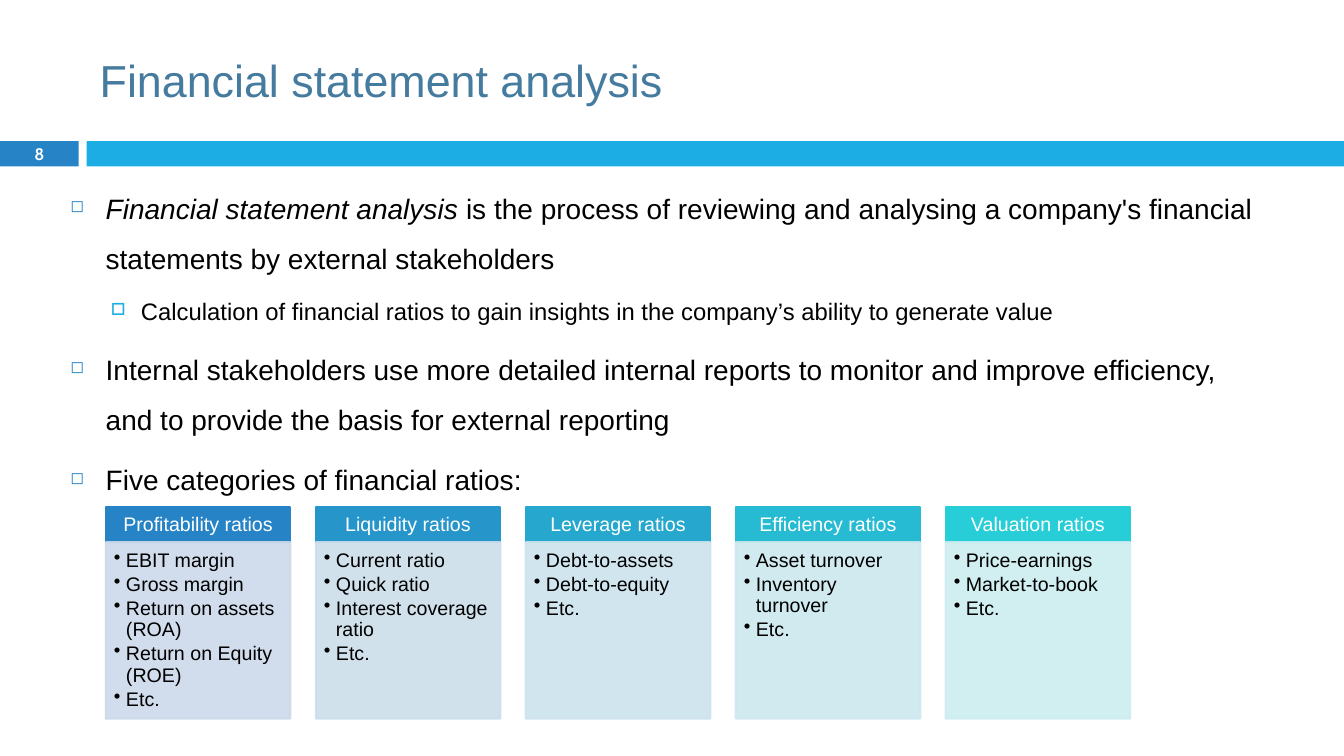
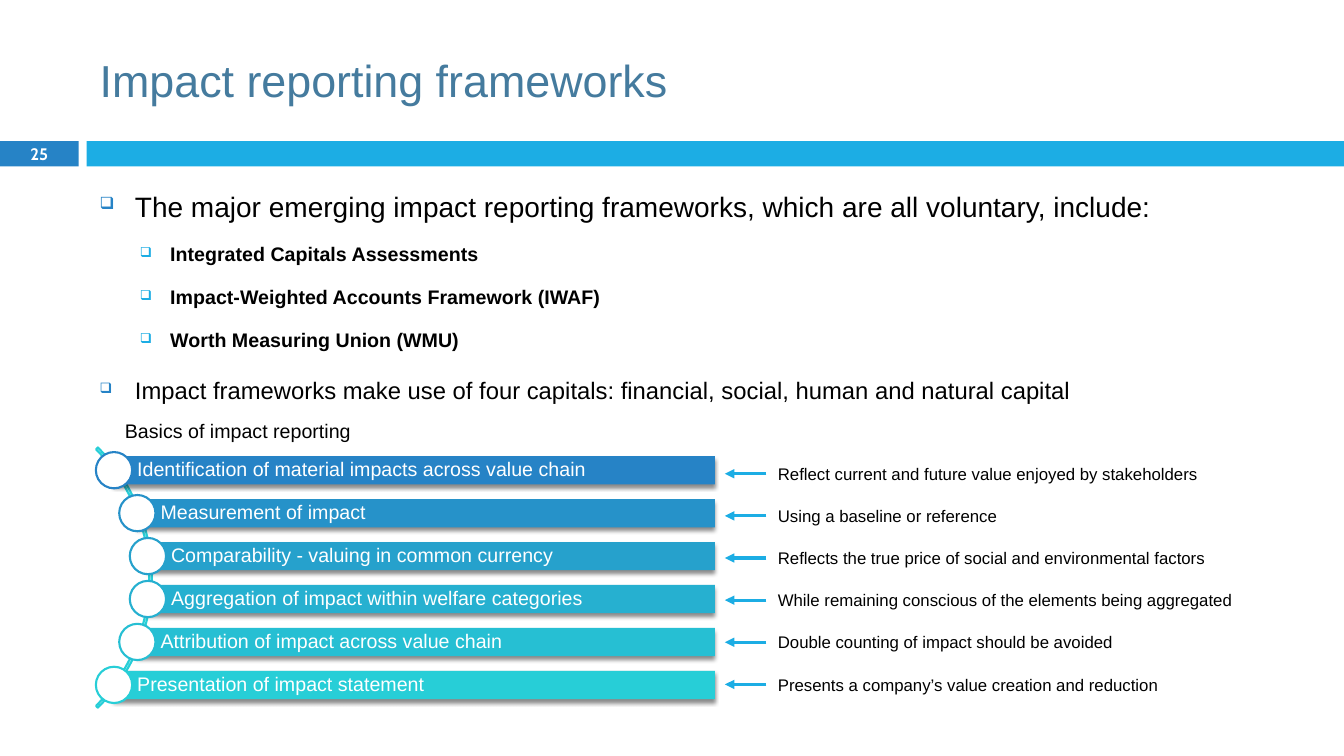
from dataclasses import dataclass
from math import sqrt
from typing import NamedTuple

from lxml import etree
from pptx import Presentation
from pptx.dml.color import RGBColor
from pptx.enum.shapes import MSO_CONNECTOR, MSO_SHAPE
from pptx.enum.text import MSO_ANCHOR, PP_ALIGN
from pptx.oxml.ns import qn
from pptx.util import Inches, Pt

RECT, ROUND = MSO_SHAPE.RECTANGLE, MSO_SHAPE.ROUNDED_RECTANGLE
OVAL, ARC = MSO_SHAPE.OVAL, MSO_SHAPE.BLOCK_ARC
TOP, MID = MSO_ANCHOR.TOP, MSO_ANCHOR.MIDDLE
LEFT, MIDDLE = PP_ALIGN.LEFT, PP_ALIGN.CENTER
STRAIGHT = MSO_CONNECTOR.STRAIGHT

WIDE, HIGH = 13.33, 7.5
HUE = {
    "title": "457B9E", "blue": "2683C6", "sky": "1CADE4", "aqua": "27CED7",
    "mist": "CDD9EA", "foam": "CDEDF0", "black": "000000", "white": "FFFFFF",
}
PAD = (0.1, 0.05, 0.1, 0.05)


class Box(NamedTuple):
    x: float
    y: float
    w: float
    h: float


class Mark(NamedTuple):
    sign: str
    left: float
    hang: float
    hue: str = ""
    size: int = 100


@dataclass(frozen=True)
class Style:
    size: float
    hue: str = HUE["black"]
    face: str = "Arial"
    bold: bool = False
    align: PP_ALIGN = LEFT
    lines: float = 1.0
    before: float = 0
    after: float = 0


@dataclass(frozen=True)
class Para:
    text: str
    style: Style
    mark: Mark | None = None
    lead: str = ""


class Card(NamedTuple):
    head: str
    items: list[str]


class Step(NamedTuple):
    name: str
    note: str


TITLE = Style(32, HUE["title"])
PAGE = Style(11.9, HUE["white"], "Cabin", True, MIDDLE)
MAIN = Style(20, lines=1.5, before=7)
MINOR = Style(17, lines=1.5, before=7)
SUB = Style(17, lines=1.5, before=5.5)
NAME = Style(14, bold=True, lines=1.5, before=5.5)
HEAD = Style(14, HUE["white"], align=MIDDLE, lines=0.9, after=4.9)
BAR = Style(14, HUE["white"], lines=0.9, after=4.9)
ITEM = Style(14, lines=0.9, after=2.1)
LABEL, NOTE = Style(14), Style(12)

DOT = Mark("•", 0.12, 0.12)


def outer(sign: str) -> Mark:
    return Mark(sign, 0.35, 0.35, HUE["blue"], 60)


def inner(sign: str) -> Mark:
    return Mark(sign, 0.7, 0.3, HUE["sky"], 70)


CARDS = [
    Card("Profitability ratios", ["EBIT margin", "Gross margin", "Return on assets (ROA)",
                                  "Return on Equity (ROE)", "Etc."]),
    Card("Liquidity ratios", ["Current ratio", "Quick ratio", "Interest coverage ratio", "Etc."]),
    Card("Leverage ratios", ["Debt-to-assets", "Debt-to-equity", "Etc."]),
    Card("Efficiency ratios", ["Asset turnover", "Inventory turnover", "Etc."]),
    Card("Valuation ratios", ["Price-earnings", "Market-to-book", "Etc."]),
]
STEPS = [
    Step("Identification of material impacts across value chain",
         "Reflect current and future value enjoyed by stakeholders"),
    Step("Measurement of impact", "Using a baseline or reference"),
    Step("Comparability - valuing in common currency",
         "Reflects the true price of social and environmental factors"),
    Step("Aggregation of impact within welfare categories",
         "While remaining conscious of the elements being aggregated"),
    Step("Attribution of impact across value chain",
         "Double counting of impact should be avoided"),
    Step("Presentation of impact statement",
         "Presents a company’s value creation and reduction"),
]
RATIOS = [
    Para("is the process of reviewing and analysing a company's financial statements "
         "by external stakeholders", MAIN, outer("◻"), "Financial statement analysis "),
    Para("Calculation of financial ratios to gain insights in the company’s ability "
         "to generate value", SUB, inner("□")),
    Para("Internal stakeholders use more detailed internal reports to monitor and improve "
         "efficiency, and to provide the basis for external reporting", MAIN, outer("◻")),
    Para("Five categories of financial ratios:", MAIN, outer("◻")),
]
FRAMES = [
    Para("The major emerging impact reporting frameworks, which are all voluntary, include:",
         MAIN, outer("❑")),
    *(Para(name, NAME, inner("❑")) for name in (
        "Integrated Capitals Assessments",
        "Impact-Weighted Accounts Framework (IWAF)",
        "Worth Measuring Union (WMU)")),
    Para("Impact frameworks make use of four capitals: financial, social, human "
         "and natural capital", MINOR, outer("❑")),
]


def blend(start: str, end: str, share: float) -> str:
    """Mix two hex colours; share 0 gives the first, 1 the second."""
    pairs = zip(bytes.fromhex(start), bytes.fromhex(end))
    return "".join(f"{int(a + (b - a) * share):02X}" for a, b in pairs)


def child(node, tag: str, **attrs):
    return etree.SubElement(node, qn(tag), {k: str(v) for k, v in attrs.items()})


def bullet(para, mark: Mark) -> None:
    props = para._p.get_or_add_pPr()
    props.set("marL", str(Inches(mark.left)))
    props.set("indent", str(-Inches(mark.hang)))
    if mark.hue:
        child(child(props, "a:buClr"), "a:srgbClr", val=mark.hue)
    child(props, "a:buSzPct", val=mark.size * 1000)
    child(props, "a:buChar", char=mark.sign)


def write(shape, paras: list[Para], anchor=TOP, pad=PAD) -> None:
    frame = shape.text_frame
    frame.word_wrap = True
    frame.vertical_anchor = anchor
    frame.margin_left, frame.margin_top, frame.margin_right, frame.margin_bottom = map(Inches, pad)
    for i, item in enumerate(paras):
        para = frame.add_paragraph() if i else frame.paragraphs[0]
        style = item.style
        if item.mark:
            bullet(para, item.mark)
        para.alignment, para.line_spacing = style.align, style.lines
        para.space_before, para.space_after = Pt(style.before), Pt(style.after)
        font = para.font
        font.size, font.name, font.bold = Pt(style.size), style.face, style.bold
        font.color.rgb = RGBColor.from_string(style.hue)
        if item.lead:
            lead = para.add_run()
            lead.text, lead.font.italic = item.lead, True
        para.add_run().text = item.text


def label(slide, box: Box, paras: list[Para], anchor=TOP) -> None:
    write(slide.shapes.add_textbox(*map(Inches, box)), paras, anchor)


def draw(slide, kind, box: Box, fill: str = "", line: str = ""):
    shape = slide.shapes.add_shape(kind, *map(Inches, box))
    shape.shadow.inherit = False
    if fill:
        shape.fill.solid()
        shape.fill.fore_color.rgb = RGBColor.from_string(fill)
    else:
        shape.fill.background()
    if line:
        shape.line.color.rgb = RGBColor.from_string(line)
        shape.line.width = Pt(1.5)
    else:
        shape.line.fill.background()
    return shape


def fade(shape, share: int) -> None:
    """Make fill and line opaque by the given percentage."""
    for hue in shape._element.spPr.iter(qn("a:srgbClr")):
        child(hue, "a:alpha", val=share * 1000)


def shade(shape) -> None:
    """Cast a soft shadow straight down."""
    effects = shape._element.spPr.find(qn("a:effectLst"))
    cast = child(effects, "a:outerShdw", blurRad=Pt(3), dist=Pt(2.4), dir=5400000, rotWithShape=0)
    child(child(cast, "a:srgbClr", val=HUE["black"]), "a:alpha", val=45000)


def arrow(slide, card, tip: float, y: float) -> None:
    """Point left from the left side of a card."""
    line = slide.shapes.add_connector(STRAIGHT, card.left, Inches(y), Inches(tip), Inches(y))
    line.begin_connect(card, 1)
    line.end_y = line.begin_y
    line.line.color.rgb = RGBColor.from_string(HUE["sky"])
    line.line.width = Pt(2.25)
    child(line.line._get_or_add_ln(), "a:tailEnd", type="triangle")
    child(line._element.spPr, "a:effectLst")


def start(deck, title: str, page: int):
    """Add a slide with its title, band and page number."""
    slide = deck.slides.add_slide(deck.slide_layouts[6])
    tab = draw(slide, RECT, Box(0, 1.4, 0.78, 0.25), HUE["blue"])
    draw(slide, RECT, Box(0.86, 1.4, WIDE - 0.86, 0.25), HUE["sky"])
    label(slide, Box(0.89, 0.25, 11.89, 1.08), [Para(title, TITLE)], MID)
    write(tab, [Para(str(page), PAGE)], MID)
    return slide


def ratios(deck) -> None:
    slide = start(deck, "Financial statement analysis", 8)
    label(slide, Box(0.6, 1.68, 12.05, 5.23), RATIOS)
    left, top, wide, head, body = 1.05, 5.03, 1.83, 0.35, 1.75
    pitch = (9.38 - left) / (len(CARDS) - 1)
    for i, card in enumerate(CARDS):
        x, share = left + i * pitch, i / (len(CARDS) - 1)
        hue = blend(HUE["blue"], HUE["aqua"], share)
        tint = blend(HUE["mist"], HUE["foam"], share)
        cap = draw(slide, RECT, Box(x, top, wide, head), hue, hue)
        write(cap, [Para(card.head, HEAD)], MID, (0.11, 0.06, 0.11, 0.06))
        pane = draw(slide, RECT, Box(x, top + head, wide, body), tint, tint)
        fade(pane, 90)
        write(pane, [Para(t, ITEM, DOT) for t in card.items], TOP, (0.08, 0.08, 0.11, 0.12))


def impact(deck) -> None:
    slide = start(deck, "Impact reporting frameworks", 25)
    label(slide, Box(0.89, 1.66, 11.44, 5.08), FRAMES)
    size, hub, mid, reach = 3.65, -0.32, 5.73, 1.8
    arc = draw(slide, ARC, Box(hub - size / 2, mid - size / 2, size, size), line=HUE["aqua"])
    for i, turn in enumerate((189, 27, 0.007)):
        arc.adjustments[i] = turn
    last = len(STEPS) - 1
    pitch, gap, end, bar, ball = 2.13 / last, 2.09 / last, 7.09, 0.28, 0.36
    for i, step in enumerate(STEPS):
        drop = (i - last / 2) * pitch
        x, y = hub + sqrt(reach ** 2 - drop ** 2), mid + drop
        hue = blend(HUE["blue"], HUE["aqua"], i / last)
        strip = draw(slide, RECT, Box(x, y - bar / 2, end - x, bar), hue)
        shade(strip)
        write(strip, [Para(step.name, BAR)], MID, (0.23, 0.04, 0.04, 0.04))
        draw(slide, OVAL, Box(x - ball / 2, y - ball / 2, ball, ball), HUE["white"], hue)
        note = draw(slide, ROUND, Box(7.6, 4.53 + i * gap, 5.26, 0.34), HUE["white"])
        write(note, [Para(step.note, NOTE)], MID)
        arrow(slide, note, 7.19, 4.7 + i * gap)
    label(slide, Box(1.14, 4.11, 2.59, 0.34), [Para("Basics of impact reporting", LABEL)])


def main() -> None:
    deck = Presentation()
    deck.slide_width, deck.slide_height = Inches(WIDE), Inches(HIGH)
    ratios(deck)
    impact(deck)
    deck.save("out.pptx")


if __name__ == "__main__":
    main()
